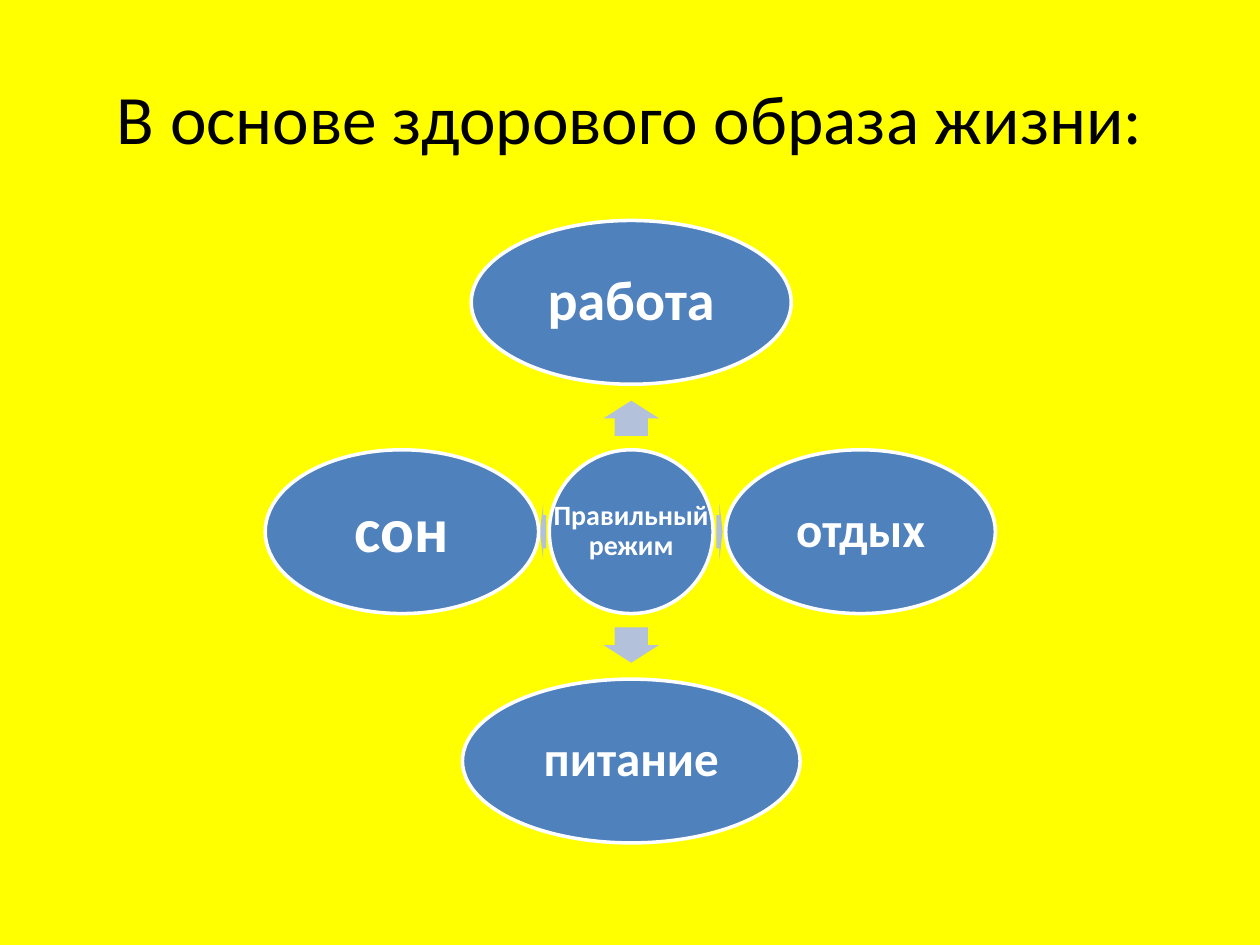
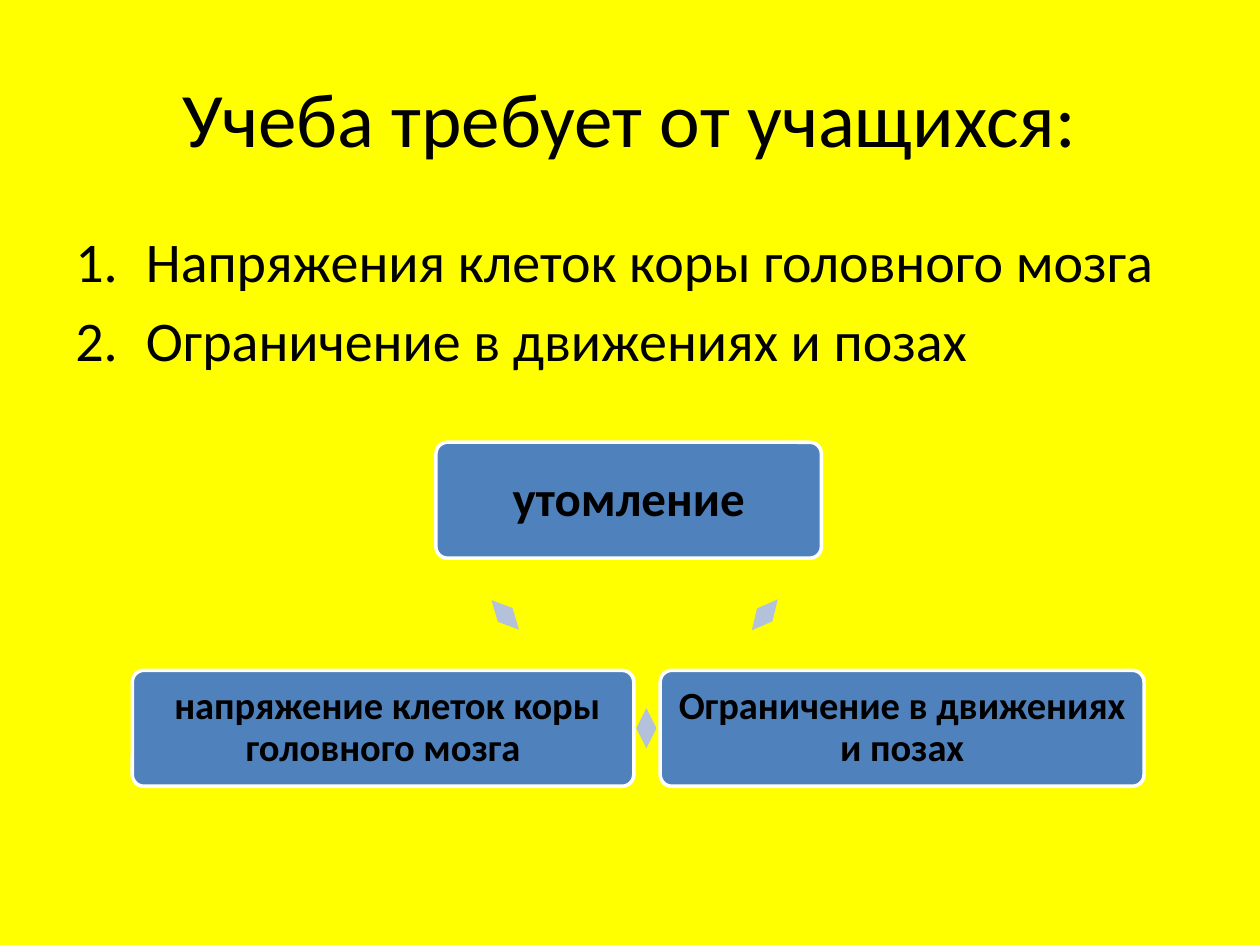
import math

import pptx
import pptx.dml.color
import pptx.enum.shapes
import pptx.enum.text
import pptx.oxml
import pptx.oxml.ns
import pptx.util

Inches = pptx.util.Inches
Pt = pptx.util.Pt
RGBColor = pptx.dml.color.RGBColor
Shape = pptx.enum.shapes.MSO_SHAPE
Align = pptx.enum.text.PP_ALIGN
Anchor = pptx.enum.text.MSO_ANCHOR

# Shared style
FONT = "Calibri"
YELLOW = RGBColor(0xFF, 0xFF, 0x00)
BLUE = RGBColor(0x4F, 0x81, 0xBD)
PALE_BLUE = RGBColor(0xB3, 0xC1, 0xDB)
WHITE = RGBColor(0xFF, 0xFF, 0xFF)
BLACK = RGBColor(0x00, 0x00, 0x00)

# Wheel of habits: centre, distances from it and ellipse height
WHEEL_X, WHEEL_Y = 5.01, 4.22
WHEEL_RADIUS = 1.82
ELLIPSE_HEIGHT = 1.3


def set_font(paragraph, size, color, bold=False):
    paragraph.font.name = FONT
    paragraph.font.size = Pt(size)
    paragraph.font.bold = bold
    paragraph.font.color.rgb = color


def set_margins(frame, margin):
    frame.margin_left = frame.margin_right = Inches(margin)
    frame.margin_top = frame.margin_bottom = Inches(margin)


def add_page(deck, title, title_size):
    """Add a yellow page with its centred title."""
    page = deck.slides.add_slide(deck.slide_layouts[6])
    page.background.fill.solid()
    page.background.fill.fore_color.rgb = YELLOW
    box = page.shapes.add_textbox(Inches(0.5), Inches(0.3), Inches(9), Inches(1.25))
    frame = box.text_frame
    frame.word_wrap = True
    frame.vertical_anchor = Anchor.MIDDLE
    paragraph = frame.paragraphs[0]
    paragraph.text = title
    paragraph.alignment = Align.CENTER
    set_font(paragraph, title_size, BLACK)
    return page


def add_centred_shape(page, kind, x, y, width, height, fill):
    """Add a flat preset shape around the point (x, y)."""
    shape = page.shapes.add_shape(
        kind, Inches(x - width / 2), Inches(y - height / 2), Inches(width), Inches(height))
    shape.shadow.inherit = False
    shape.fill.solid()
    shape.fill.fore_color.rgb = fill
    return shape


def add_node(page, kind, x, y, width, height, text, size, color, margin, wrap):
    """Add a blue, white-edged shape with a bold label."""
    node = add_centred_shape(page, kind, x, y, width, height, BLUE)
    node.line.color.rgb = WHITE
    node.line.width = Pt(2)
    frame = node.text_frame
    frame.word_wrap = wrap
    frame.vertical_anchor = Anchor.MIDDLE
    set_margins(frame, margin)
    paragraph = frame.paragraphs[0]
    paragraph.text = text
    paragraph.alignment = Align.CENTER
    paragraph.line_spacing = 0.9
    set_font(paragraph, size, color, bold=True)
    return node


def add_ellipse(page, x, y, width, text, size):
    add_node(page, Shape.OVAL, x, y, width, ELLIPSE_HEIGHT, text, size, WHITE, 0.02, False)


def add_block_arrow(page, kind, x, y, width, height, angle):
    arrow = add_centred_shape(page, kind, x, y, width, height, PALE_BLUE)
    arrow.line.fill.background()
    arrow.adjustments[0] = 0.6
    arrow.adjustments[1] = 0.5
    arrow.rotation = angle


def add_numbered_list(page, items):
    box = page.shapes.add_textbox(Inches(0.5), Inches(1.75), Inches(9), Inches(4.95))
    frame = box.text_frame
    frame.word_wrap = True
    for index, item in enumerate(items):
        paragraph = frame.paragraphs[0] if index == 0 else frame.add_paragraph()
        paragraph.text = item
        paragraph.space_before = Pt(6.4)
        set_font(paragraph, 32, BLACK)
        # Automatic number with a hanging indent
        properties = paragraph._p.get_or_add_pPr()
        properties.set("marL", str(Inches(0.56)))
        properties.set("indent", str(Inches(-0.56)))
        number = pptx.oxml.parse_xml(
            f'<a:buAutoNum {pptx.oxml.ns.nsdecls("a")} type="arabicPeriod"/>')
        properties.find(pptx.oxml.ns.qn("a:defRPr")).addprevious(number)


def build_wheel_page(deck):
    page = add_page(deck, "В основе здорового образа жизни:", 39.6)
    add_ellipse(page, WHEEL_X, WHEEL_Y, ELLIPSE_HEIGHT, "Правильный\vрежим", 16)
    # Direction, label, text size, ellipse width, arrow length, arrow distance
    habits = [
        (270, "работа", 32, 2.54, 0.28, 0.9),
        (0, "отдых", 28, 2.14, 0.05, 0.7),
        (90, "питание", 28, 2.68, 0.28, 0.9),
        (180, "сон", 36, 2.17, 0.05, 0.7),
    ]
    for angle, label, size, width, length, distance in habits:
        across, down = math.cos(math.radians(angle)), math.sin(math.radians(angle))
        add_block_arrow(page, Shape.RIGHT_ARROW, WHEEL_X + distance * across,
                        WHEEL_Y + distance * down, length, 0.44, angle)
        add_ellipse(page, WHEEL_X + WHEEL_RADIUS * across,
                    WHEEL_Y + WHEEL_RADIUS * down, width, label, size)


def build_fatigue_page(deck):
    page = add_page(deck, "Учеба требует от учащихся:", 44)
    add_numbered_list(page, ["Напряжения клеток коры головного мозга",
                             "Ограничение в движениях и позах"])
    # Centre, width, label, text size, margin
    causes = [
        (4.99, 3.97, 3.06, "утомление", 28, 0.12),
        (7.16, 5.78, 3.84, "Ограничение в движениях и позах", 22, 0.09),
        (3.04, 5.78, 3.98, " напряжение клеток коры головного мозга", 22, 0.09),
    ]
    for x, y, width, label, size, margin in causes:
        node = add_node(page, Shape.ROUNDED_RECTANGLE, x, y, width, 0.92,
                        label, size, BLACK, margin, True)
        node.adjustments[0] = 0.1
    # Two-way arrows between the boxes
    for x, y, angle in [(6.07, 4.88, 40), (5.13, 5.78, 180), (4.01, 4.88, 317.1)]:
        add_block_arrow(page, Shape.LEFT_RIGHT_ARROW, x, y, 0.16, 0.32, angle)


def main():
    deck = pptx.Presentation()
    deck.slide_width = Inches(10)
    deck.slide_height = Inches(7.5)
    build_wheel_page(deck)
    build_fatigue_page(deck)
    deck.save("out.pptx")


if __name__ == "__main__":
    main()
